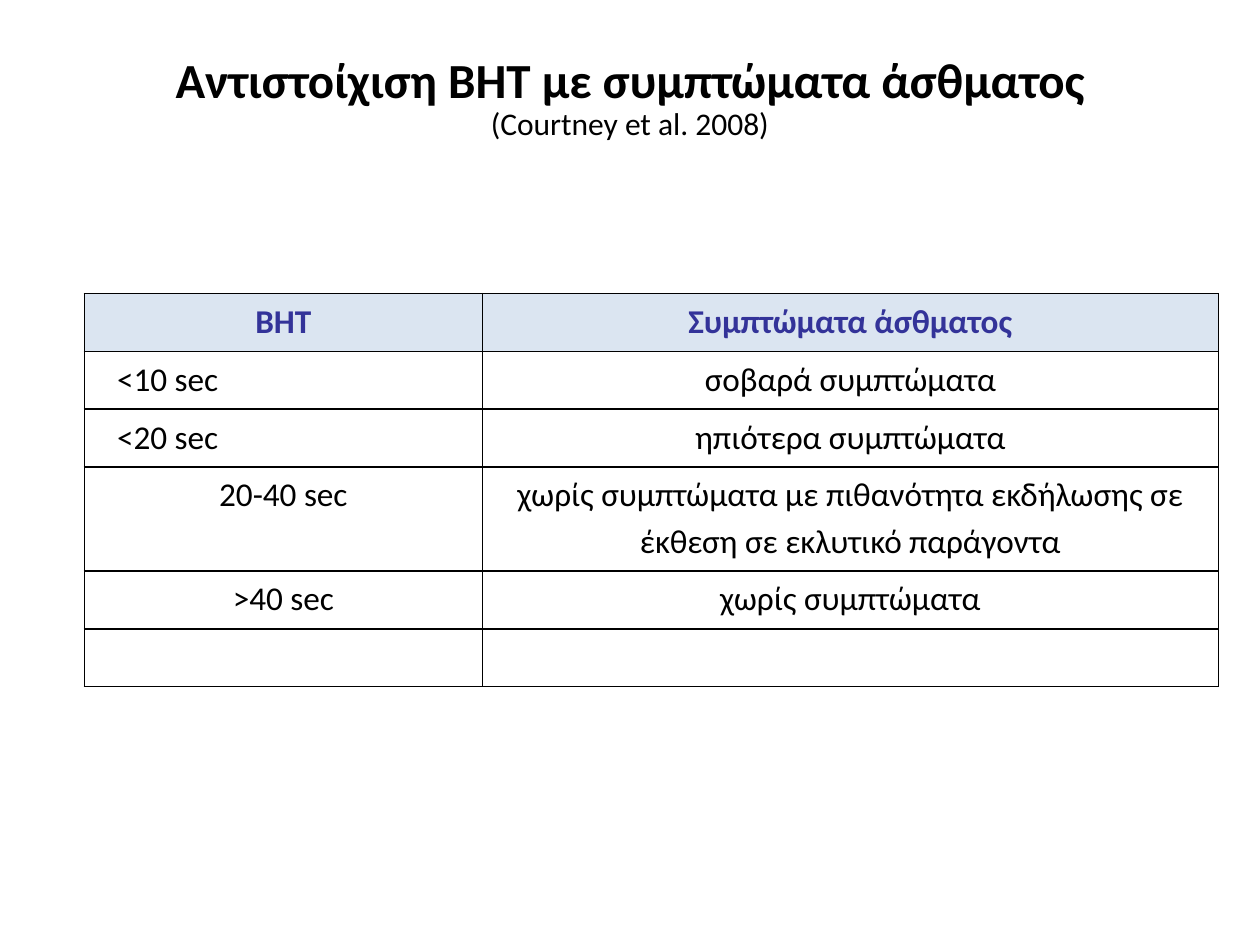
import pptx
import pptx.dml.color
import pptx.enum.text
import pptx.oxml
import pptx.oxml.ns
import pptx.util

Pt = pptx.util.Pt
RGBColor = pptx.dml.color.RGBColor
ALIGN = pptx.enum.text.PP_ALIGN
ANCHOR = pptx.enum.text.MSO_ANCHOR

BLACK = RGBColor(0x00, 0x00, 0x00)
HEADING_BLUE = RGBColor(0x33, 0x33, 0x99)
HEADING_FILL = RGBColor(0xDB, 0xE5, 0xF1)

FONT = "Calibri"
COLUMN_WIDTHS = (227.5, 420.5)
ROW_HEIGHTS = (33, 33, 33, 59.5, 33, 33)
LEFT_ALIGNED_ROWS = (1, 2)
SYMPTOMS_BY_BHT = (
    ("BHT", "Συμπτώματα άσθματος"),
    ("<10 sec", "σοβαρά συμπτώματα"),
    ("<20 sec", "ηπιότερα συμπτώματα"),
    ("20-40 sec", "χωρίς συμπτώματα με πιθανότητα εκδήλωσης σε έκθεση σε εκλυτικό παράγοντα"),
    (">40 sec", "χωρίς συμπτώματα"),
    ("", ""),
)


def set_attributes(target, values):
    for name, value in values.items():
        setattr(target, name, value)


def add_run(paragraph, text, size, bold=False, color=BLACK):
    run = paragraph.add_run()
    run.text = text
    set_attributes(run.font, {"name": FONT, "size": Pt(size), "bold": bold})
    run.font.color.rgb = color


def add_title(slide, heading, citation):
    title = slide.shapes.add_textbox(Pt(36), Pt(21.6), Pt(648), Pt(90))
    # The deeper bottom margin lifts the two centred lines
    set_attributes(title.text_frame, {
        "word_wrap": True, "vertical_anchor": ANCHOR.MIDDLE, "margin_bottom": Pt(23.4)})
    paragraph = title.text_frame.paragraphs[0]
    set_attributes(paragraph, {"alignment": ALIGN.CENTER, "line_spacing": 0.9})
    add_run(paragraph, heading, 28, bold=True)
    paragraph.add_line_break()
    add_run(paragraph, citation, 18)


def draw_borders(cell):
    properties = cell._tc.get_or_add_tcPr()
    for position, side in enumerate(("lnL", "lnR", "lnT", "lnB")):
        border = pptx.oxml.parse_xml(
            f'<a:{side} {pptx.oxml.ns.nsdecls("a")} w="{Pt(1)}"><a:solidFill>'
            f'<a:srgbClr val="{BLACK}"/></a:solidFill></a:{side}>')
        properties.insert(position, border)


def fill_cell(cell, text, is_heading, is_left):
    set_attributes(cell, {
        "margin_left": Pt(18.7 if is_left else 9.4), "margin_right": Pt(9.4),
        "margin_top": Pt(1.4), "margin_bottom": Pt(0)})
    if is_heading:
        cell.fill.solid()
        cell.fill.fore_color.rgb = HEADING_FILL
    else:
        cell.fill.background()
    draw_borders(cell)
    if text:
        paragraph = cell.text_frame.paragraphs[0]
        set_attributes(paragraph, {
            "alignment": ALIGN.LEFT if is_left else ALIGN.CENTER,
            "line_spacing": 1.15, "space_after": Pt(10)})
        add_run(paragraph, text, 19, is_heading, HEADING_BLUE if is_heading else BLACK)


def add_symptom_table(slide):
    table = slide.shapes.add_table(
        len(ROW_HEIGHTS), len(COLUMN_WIDTHS), Pt(48.2), Pt(167.8),
        Pt(sum(COLUMN_WIDTHS)), Pt(sum(ROW_HEIGHTS))).table
    set_attributes(table, {"first_row": False, "horz_banding": False})
    for column, width in zip(table.columns, COLUMN_WIDTHS):
        column.width = Pt(width)
    for row, height in zip(table.rows, ROW_HEIGHTS):
        row.height = Pt(height)
    for row_index, texts in enumerate(SYMPTOMS_BY_BHT):
        for column_index, text in enumerate(texts):
            is_left = column_index == 0 and row_index in LEFT_ALIGNED_ROWS
            fill_cell(table.cell(row_index, column_index), text, row_index == 0, is_left)


def main():
    presentation = pptx.Presentation()
    set_attributes(presentation, {"slide_width": Pt(720), "slide_height": Pt(540)})
    slide = presentation.slides.add_slide(presentation.slide_layouts[6])

    # Title with its citation
    add_title(slide, "Αντιστοίχιση BHT με συμπτώματα άσθματος", "(Courtney et al. 2008)")

    # Breath-holding times and matching symptoms
    add_symptom_table(slide)

    presentation.save("out.pptx")


if __name__ == "__main__":
    main()
